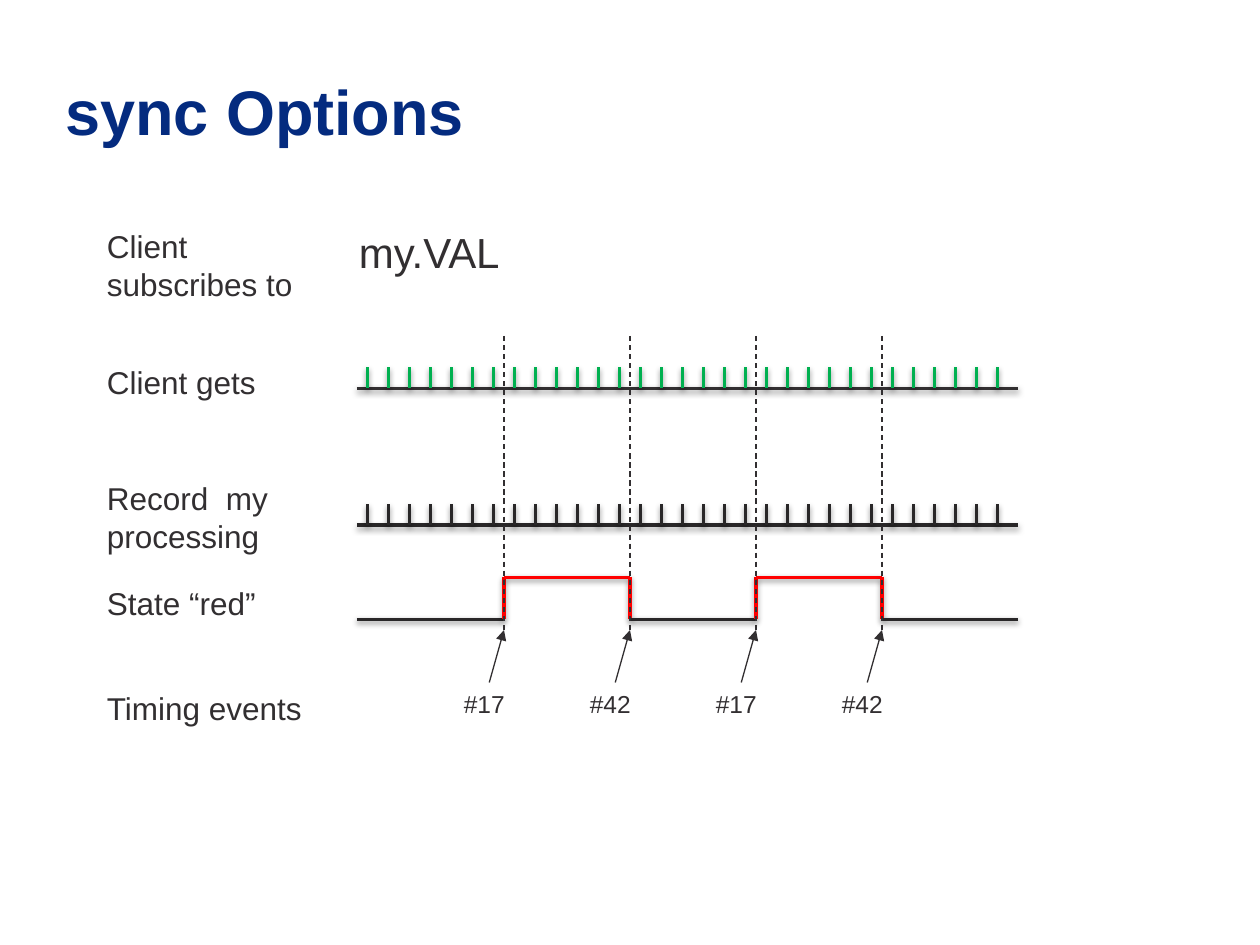
import pptx
import pptx.dml.color
import pptx.enum.dml
import pptx.enum.shapes
import pptx.enum.text
import pptx.oxml
import pptx.oxml.ns
import pptx.util

PX = 7620  # EMU; 120 px to the inch
FONT = "Arial"
NAVY = pptx.dml.color.RGBColor(0x04, 0x2B, 0x7F)
TEXT = pptx.dml.color.RGBColor(0x32, 0x2F, 0x31)
DARK = pptx.dml.color.RGBColor(0x29, 0x27, 0x28)
GREEN = pptx.dml.color.RGBColor(0x00, 0xB0, 0x50)
RED = pptx.dml.color.RGBColor(0xFF, 0x00, 0x00)

NS = pptx.oxml.ns.nsdecls("a")
SHADOW = (f'<a:effectLst {NS}><a:outerShdw blurRad="40000" dist="20000" dir="5400000" '
          'rotWithShape="0"><a:srgbClr val="000000"><a:alpha val="38000"/></a:srgbClr>'
          '</a:outerShdw></a:effectLst>')
NO_EFFECT = f"<a:effectLst {NS}/>"
ARROWHEAD = f'<a:tailEnd {NS} type="triangle"/>'
OUTLINE = (f'<a:ln {NS} w="9525"><a:solidFill><a:srgbClr val="{RED}"/>'
           '</a:solidFill></a:ln>')

AXIS_LEFT, AXIS_RIGHT = 340, 970
CLIENT_Y, RECORD_Y = 370, 500
TICK_LEFT, TICK_STEP, TICK_COUNT, TICK_HEIGHT = 350, 20, 31, 20
STATE_HIGH, STATE_LOW = 550, 590
EVENT_TOP, EVENT_Y, EVENT_LABEL_Y = 320, 600, 650
EVENTS = [(480, "#17"), (600, "#42"), (720, "#17"), (840, "#42")]

LABELS = [
    (90, 210, 210, 85, "Client subscribes to", 18),
    (90, 340, 170, 48, "Client gets", 18),
    (90, 450, 190, 85, "Record  my processing", 18),
    (90, 650, 220, 48, "Timing events", 18),
    (330, 210, 660, 60, "my.VAL", 24),
]


def px(n):
    return pptx.util.Emu(n * PX)


def add_run(p, text, size, color=TEXT, bold=False):
    r = p.add_run()
    r.text = text
    r.font.name = FONT
    r.font.size = pptx.util.Pt(size)
    r.font.bold = bold
    r.font.color.rgb = color
    return r


def add_title(s, text):
    sp = s.shapes.title
    sp.left, sp.top, sp.width, sp.height = px(50), px(40), px(1100), px(143)
    tf = sp.text_frame
    tf.auto_size = pptx.enum.text.MSO_AUTO_SIZE.NONE
    tf.vertical_anchor = pptx.enum.text.MSO_ANCHOR.MIDDLE
    p = tf.paragraphs[0]
    p.alignment = pptx.enum.text.PP_ALIGN.LEFT
    p.line_spacing = 0.8
    add_run(p, text, 36, NAVY, True)


def add_label(s, x, y, w, h, text, size):
    """Add a text box and return its paragraph."""
    tf = s.shapes.add_textbox(px(x), px(y), px(w), px(h)).text_frame
    tf.word_wrap = True
    tf.auto_size = pptx.enum.text.MSO_AUTO_SIZE.SHAPE_TO_FIT_TEXT
    p = tf.paragraphs[0]
    add_run(p, text, size)
    return p


def add_line(shapes, start, end, color=TEXT, width=0.75, effect=NO_EFFECT):
    sp = shapes.add_connector(pptx.enum.shapes.MSO_CONNECTOR.STRAIGHT,
                              *map(px, start + end))
    sp.line.color.rgb = color
    sp.line.width = pptx.util.Pt(width)
    sp._element.spPr.append(pptx.oxml.parse_xml(effect))
    return sp


def add_signal(shapes, start, end, color):
    add_line(shapes, start, end, color, 2, SHADOW)


def add_tick_row(shapes, y, axis_color, tick_color):
    add_signal(shapes, (AXIS_LEFT, y), (AXIS_RIGHT, y), axis_color)
    for i in range(TICK_COUNT):
        x = TICK_LEFT + i * TICK_STEP
        add_signal(shapes, (x, y - TICK_HEIGHT), (x, y), tick_color)


def add_state_wave(s):
    """Draw a square wave that toggles at each timing event."""
    x, y = AXIS_LEFT, STATE_LOW
    for event_x, _ in EVENTS:
        next_y = STATE_HIGH if y == STATE_LOW else STATE_LOW
        add_signal(s.shapes, (x, y), (event_x, y), DARK if y == STATE_LOW else RED)
        add_signal(s.shapes, (event_x, y), (event_x, next_y), RED)
        x, y = event_x, next_y
    add_signal(s.shapes, (x, y), (AXIS_RIGHT, y), DARK)


def add_event_pointer(s, x, name):
    add_label(s, x - 50, EVENT_LABEL_Y, 70, 41, name, 14)
    sp = add_line(s.shapes, (x - 14, EVENT_LABEL_Y), (x, EVENT_Y))
    sp.line._get_or_add_ln().append(pptx.oxml.parse_xml(ARROWHEAD))


def add_event_guide(s, x):
    sp = add_line(s.shapes, (x, EVENT_TOP), (x, EVENT_Y))
    sp.line.dash_style = pptx.enum.dml.MSO_LINE.DASH


def main():
    prs = pptx.Presentation()
    prs.slide_width, prs.slide_height = px(1200), px(900)
    s = prs.slides.add_slide(prs.slide_layouts[5])
    add_title(s, "sync Options")
    add_tick_row(s.shapes.add_group_shape().shapes, RECORD_Y, DARK, DARK)
    add_state_wave(s)
    for x, name in EVENTS:
        add_event_pointer(s, x, name)
    add_tick_row(s.shapes, CLIENT_Y, TEXT, GREEN)
    for label in LABELS:
        add_label(s, *label)
    p = add_label(s, 90, 550, 170, 48, "State ", 18)
    r = add_run(p, "“red”", 18)
    r.font._element.insert(0, pptx.oxml.parse_xml(OUTLINE))
    for x, _ in EVENTS:
        add_event_guide(s, x)
    prs.save("out.pptx")


if __name__ == "__main__":
    main()
